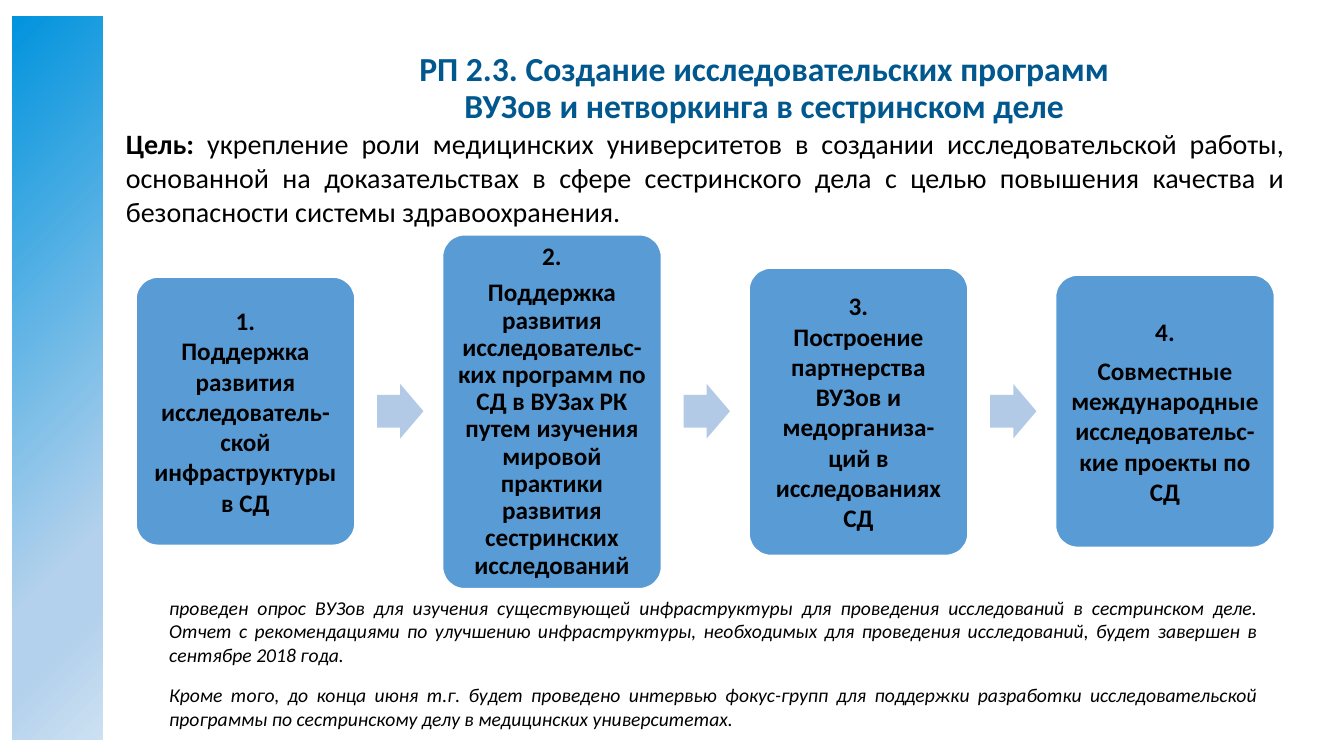
from dataclasses import dataclass

from lxml.etree import SubElement
from pptx import Presentation
from pptx.dml.color import RGBColor
from pptx.enum.shapes import MSO_SHAPE
from pptx.enum.text import MSO_ANCHOR, MSO_AUTO_SIZE, PP_ALIGN
from pptx.oxml.ns import qn
from pptx.util import Pt

PX = 9144


@dataclass(frozen=True)
class Theme:
    """Colours and type sizes of the slide."""
    font: str = "Calibri"
    title: str = "01588E"
    text: str = "000000"
    white: str = "FFFFFF"
    step: str = "599BD5"
    arrow: str = "B3CAE7"
    sidebar: tuple = ((0, "0093DD"), (74, "B3D1EC"), (83, "B3D1EC"), (100, "CCE0F2"))
    title_size: int = 24
    goal_size: int = 20
    step_size: int = 18
    note_size: int = 14


THEME = Theme()
STEP_LEFT, STEP_WIDTH, STEP_PITCH, STEP_MIDDLE = 135, 217, 304, 408
ARROW_OFFSET, ARROW_WIDTH, ARROW_HEIGHT = 239, 46, 54

TITLE = "РП 2.3. Создание исследовательских программ ВУЗов и нетворкинга в сестринском деле"
GOAL = ("укрепление роли медицинских университетов в создании исследовательской работы, "
        "основанной на доказательствах в сфере сестринского дела с целью повышения "
        "качества и безопасности системы здравоохранения.")
NOTES = [
    "проведен опрос ВУЗов для изучения существующей инфраструктуры для проведения "
    "исследований в сестринском деле. Отчет с рекомендациями по улучшению "
    "инфраструктуры, необходимых для проведения исследований, будет завершен в "
    "сентябре 2018 года.",
    "Кроме того, до конца июня т.г. будет проведено интервью фокус-групп для поддержки "
    "разработки исследовательской программы по сестринскому делу в медицинских "
    "университетах.",
]
STEPS = [
    ("Поддержка развития исследователь-ской инфраструктуры в СД", 266, 1, 0),
    ("Поддержка развития исследовательс-ких программ по СД в ВУЗах РК путем изучения "
     "мировой практики развития сестринских исследований", 351, 0.9, 6.3),
    ("Построение партнерства ВУЗов и медорганиза-ций в исследованиях СД", 285, 1, 0),
    ("Совместные международные исследовательс-кие проекты по СД", 270, 1, 6.3),
]


def box(left, top, width, height):
    """Turn pixel lengths into EMU."""
    return [length * PX for length in (left, top, width, height)]


def write_text(shape, paragraphs, size, color=THEME.text, align=PP_ALIGN.CENTER,
               bold=False, italic=False, lead="", line_spacing=1, space_before=0,
               anchor=MSO_ANCHOR.MIDDLE, insets=(10, 5)):
    """Fill a shape with formatted paragraphs, with an optional bold lead."""
    frame = shape.text_frame
    frame.word_wrap = True
    frame.auto_size = MSO_AUTO_SIZE.NONE
    frame.vertical_anchor = anchor
    frame.margin_left = frame.margin_right = insets[0] * PX
    frame.margin_top = frame.margin_bottom = insets[1] * PX
    for index, text in enumerate(paragraphs):
        paragraph = frame.add_paragraph() if index else frame.paragraphs[0]
        paragraph.alignment = align
        paragraph.line_spacing = line_spacing
        paragraph.space_before = Pt(space_before if index else 0)
        runs = [(text, bold)] if index or not lead else [(lead, True), (text, bold)]
        for content, is_bold in runs:
            run = paragraph.add_run()
            run.text = content
            run.font.name = THEME.font
            run.font.size = Pt(size)
            run.font.bold = is_bold
            run.font.italic = italic
            run.font.color.rgb = RGBColor.from_string(color)


def add_block(slide, kind, place, fill=None, outlined=True):
    """Add a preset shape with a flat fill and an optional white outline."""
    shape = slide.shapes.add_shape(kind, *box(*place))
    shape.shadow.inherit = False
    if fill:
        shape.fill.solid()
        shape.fill.fore_color.rgb = RGBColor.from_string(fill)
    if outlined:
        shape.line.color.rgb = RGBColor.from_string(THEME.white)
        shape.line.width = Pt(1)
    else:
        shape.line.fill.background()
    return shape


def add_sidebar(slide):
    """Add the diagonal gradient band on the left."""
    sidebar = add_block(slide, MSO_SHAPE.RECTANGLE, (11, 15, 92, 720))
    sidebar.fill.gradient()
    sidebar.fill.gradient_angle = 315
    stops = sidebar.element.xpath(".//a:gsLst")[0]
    for stop in list(stops):
        stops.remove(stop)
    for position, color in THEME.sidebar:
        stop = SubElement(stops, qn("a:gs"), pos=str(position * 1000))
        SubElement(stop, qn("a:srgbClr"), val=color)


def add_title(slide):
    """Place and fill the title placeholder."""
    title = slide.shapes.title
    title.left, title.top, title.width, title.height = box(391, 56, 734, 65)
    write_text(title, [TITLE], THEME.title_size, color=THEME.title, bold=True,
               line_spacing=0.9, insets=(10, 10))


def add_text(slide, place, paragraphs, size, **text_format):
    """Add a justified text box."""
    text_box = slide.shapes.add_textbox(*box(*place))
    write_text(text_box, paragraphs, size, align=PP_ALIGN.JUSTIFY,
               anchor=MSO_ANCHOR.TOP, **text_format)


def add_step(slide, index, text, height, line_spacing, space_before):
    """Add one numbered step, centred on the common middle line."""
    place = (STEP_LEFT + index * STEP_PITCH, STEP_MIDDLE - height // 2, STEP_WIDTH, height)
    step = add_block(slide, MSO_SHAPE.ROUNDED_RECTANGLE, place, THEME.step)
    step.adjustments[0] = 0.1
    write_text(step, [f"{index + 1}.", text], THEME.step_size, bold=True,
               line_spacing=line_spacing, space_before=space_before, insets=(7, 7))


def add_arrow(slide, index):
    """Add the block arrow that follows a step."""
    place = (STEP_LEFT + index * STEP_PITCH + ARROW_OFFSET,
             STEP_MIDDLE - ARROW_HEIGHT // 2, ARROW_WIDTH, ARROW_HEIGHT)
    arrow = add_block(slide, MSO_SHAPE.RIGHT_ARROW, place, THEME.arrow, outlined=False)
    arrow.adjustments[0] = 0.6
    arrow.adjustments[1] = 0.5


def main():
    """Build the slide and save it."""
    presentation = Presentation()
    presentation.slide_width, presentation.slide_height = 1333 * PX, 750 * PX
    slide = presentation.slides.add_slide(presentation.slide_layouts[5])
    add_sidebar(slide)
    add_title(slide)
    add_text(slide, (115, 121, 1169, 111), [GOAL], THEME.goal_size, lead="Цель: ")
    add_text(slide, (158, 586, 1100, 168), NOTES, THEME.note_size, italic=True,
             space_before=12)
    for index, step in enumerate(STEPS):
        add_step(slide, index, *step)
        if index < len(STEPS) - 1:
            add_arrow(slide, index)
    presentation.save("out.pptx")


if __name__ == "__main__":
    main()
